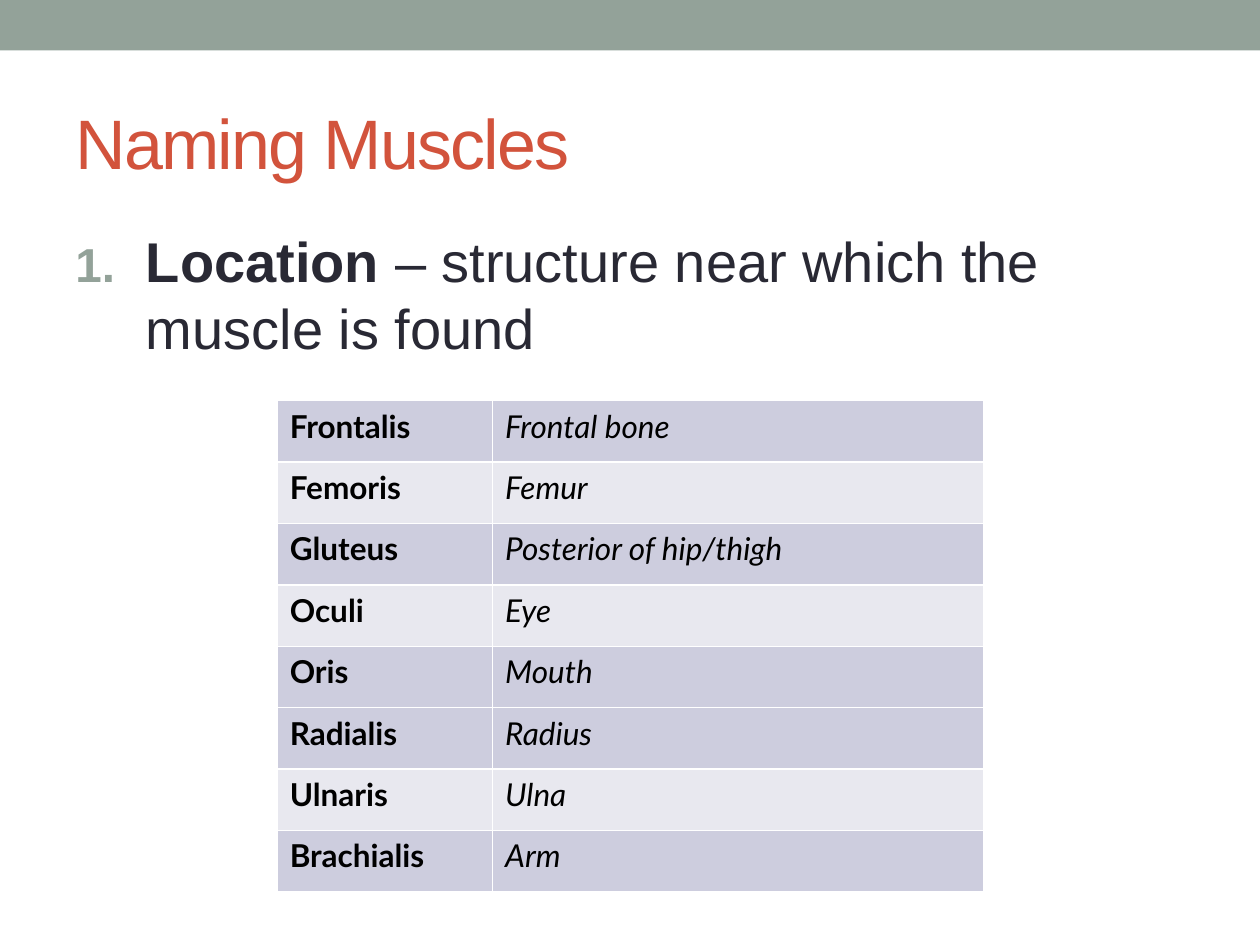
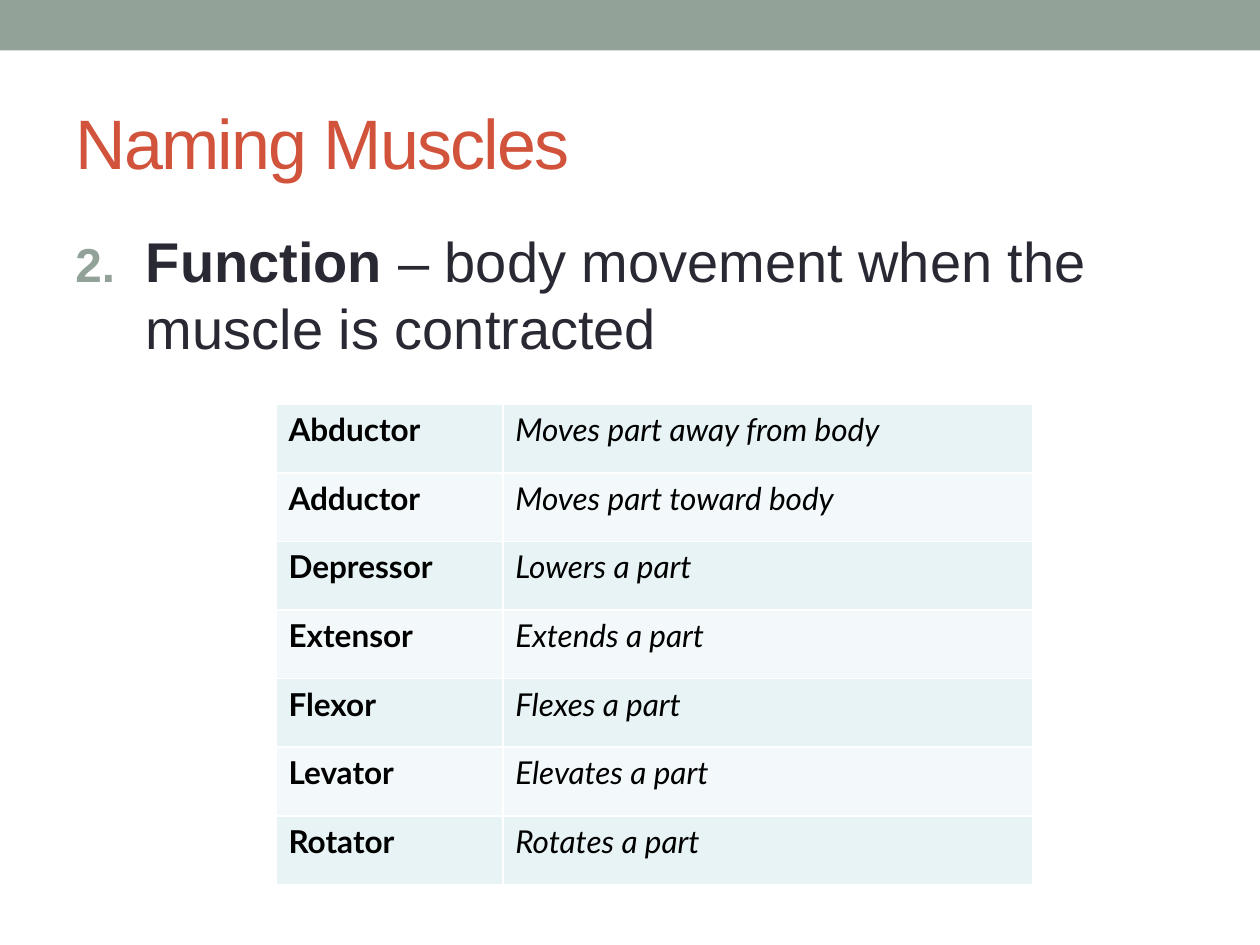
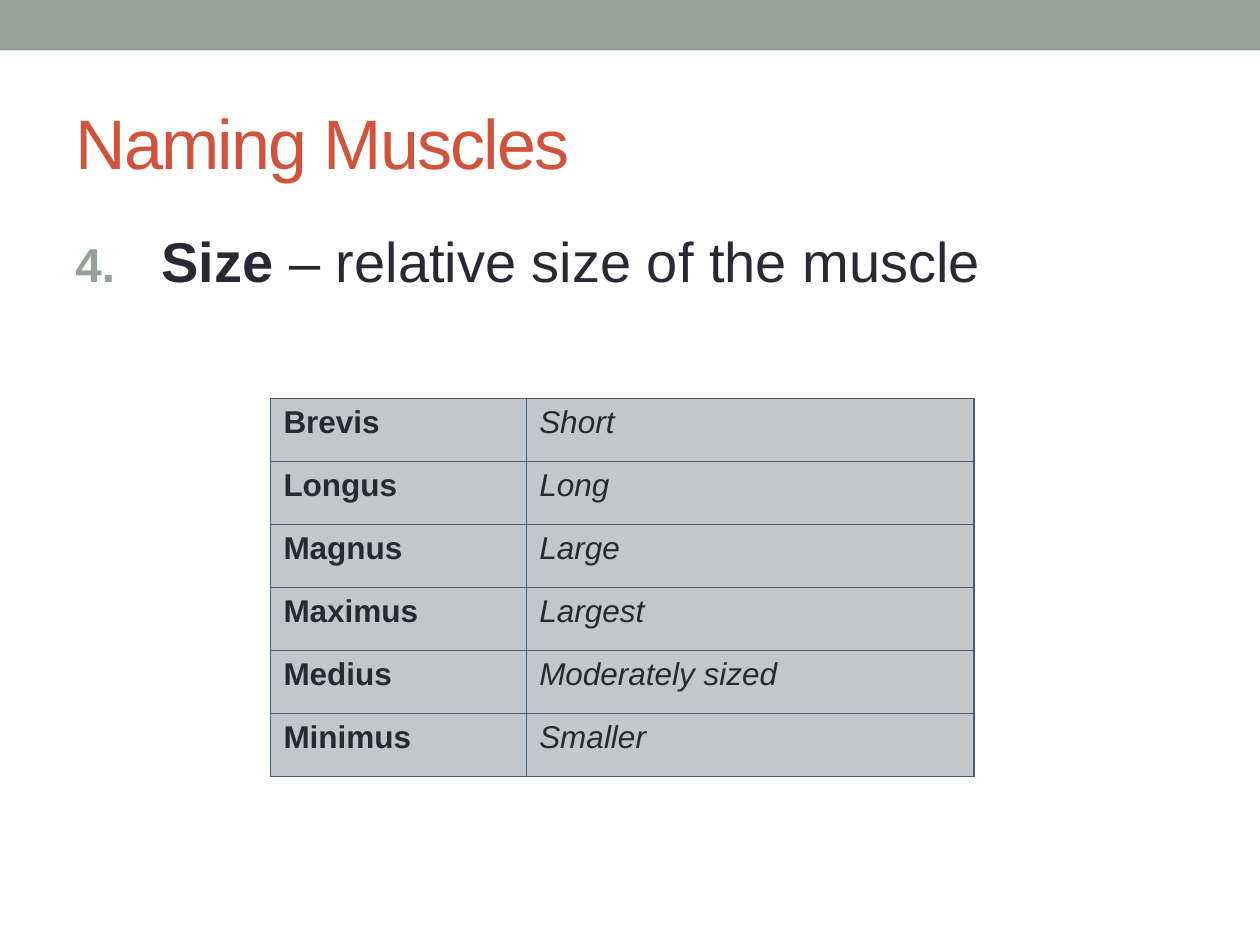
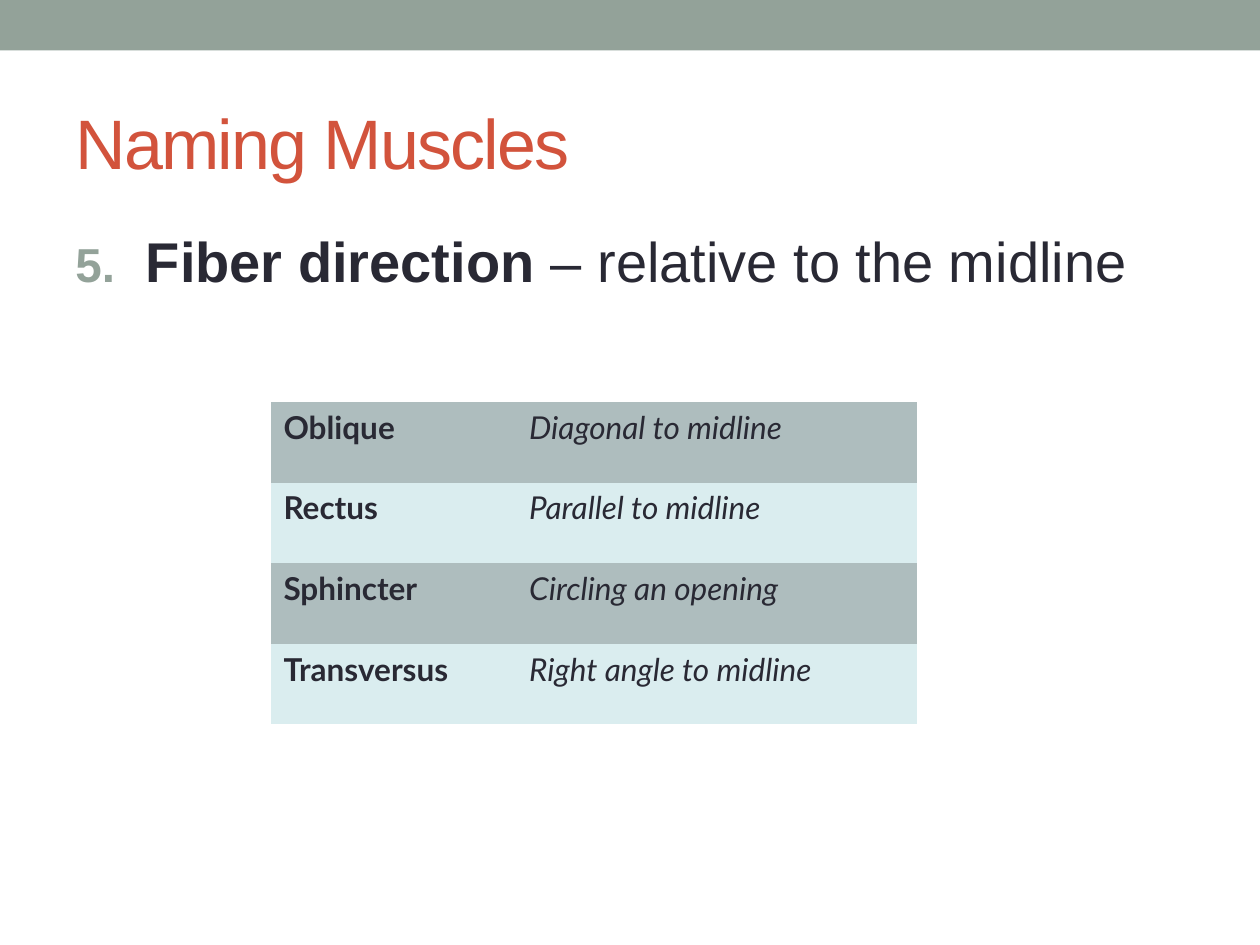
from dataclasses import dataclass

from lxml import etree
from pptx import Presentation
from pptx.dml.color import RGBColor
from pptx.enum.shapes import MSO_SHAPE
from pptx.enum.text import MSO_ANCHOR
from pptx.oxml import parse_xml
from pptx.oxml.ns import nsdecls, qn
from pptx.util import Inches, Pt

RECTANGLE = MSO_SHAPE.RECTANGLE
MIDDLE = MSO_ANCHOR.MIDDLE

COLORS = {
    "band": "93A299",
    "title": "D2533C",
    "text": "292934",
    "black": "000000",
    "white": "FFFFFF",
    "lilac": "CDCDDE",
    "pale lilac": "E8E8EF",
    "mint": "E7F3F4",
    "pale mint": "F3F9FA",
    "gray": "C3C6CB",
    "slate": "4C5A6A",
    "sage": "AEBDBE",
    "aqua": "DAEDEF",
}
TITLE = "Naming Muscles"
HEADING_FONT = "Arial"
BAND_BOX = (0, 0, 10, 0.4)
TITLE_BOX = (0.5, 0.58, 9, 1.08)
RULE_BOX = (0.5, 1.75, 9, 5.33)
NUMBER_INDENT = Inches(0.56)
PLAIN_TABLE_STYLE = "{2D5ABB26-0587-4C30-8999-92F81FD0307C}"
BORDER_SIDES = ("lnL", "lnR", "lnT", "lnB")


@dataclass
class TableStyle:
    """Look of a table of muscle names."""

    fills: tuple
    font: str = "Lato"
    text: str = "text"
    border: str = ""
    border_width: float = 1


@dataclass
class NamingRule:
    """One numbered rule with its table of names and meanings."""

    number: int
    term: str
    explanation: str
    box: tuple
    first_column: float
    style: TableStyle
    rows: list


RULES = [
    NamingRule(
        1, "Location", " – structure near which the muscle is found",
        (2.2, 3.18, 5.61, 3.9), 1.71,
        TableStyle(("lilac", "pale lilac", "lilac", "pale lilac", "lilac"),
                   text="black", border="white"),
        [("Frontalis", "Frontal bone"), ("Femoris", "Femur"),
         ("Gluteus", "Posterior of hip/thigh"), ("Oculi", "Eye"),
         ("Oris", "Mouth"), ("Radialis", "Radius"),
         ("Ulnaris", "Ulna"), ("Brachialis", "Arm")],
    ),
    NamingRule(
        2, "Function", " – body movement when the muscle is contracted",
        (2.19, 3.21, 6.01, 3.81), 1.8,
        TableStyle(("mint", "pale mint"), text="black", border="white"),
        [("Abductor", "Moves part away from body"),
         ("Adductor", "Moves part toward body"),
         ("Depressor", "Lowers a part"), ("Extensor", "Extends a part"),
         ("Flexor", "Flexes a part"), ("Levator", "Elevates a part"),
         ("Rotator", "Rotates a part")],
    ),
    NamingRule(
        4, " Size ", "– relative size of the muscle",
        (2.15, 3.16, 5.58, 3), 2.03,
        TableStyle(("gray",), font="Arial", border="slate", border_width=0.75),
        [("Brevis", "Short"), ("Longus", "Long"), ("Magnus", "Large"),
         ("Maximus", "Largest"), ("Medius", "Moderately sized"),
         ("Minimus", "Smaller")],
    ),
    NamingRule(
        5, "Fiber direction ", "– relative to the midline",
        (2.15, 3.19, 5.13, 2.56), 1.95,
        TableStyle(("sage", "aqua")),
        [("Oblique", "Diagonal to midline"), ("Rectus", "Parallel to midline"),
         ("Sphincter", "Circling an opening"),
         ("Transversus", "Right angle to midline")],
    ),
]


def color(name):
    """Return the named colour."""
    return RGBColor.from_string(COLORS[name])


def inches(box):
    """Turn a box of numbers into lengths."""
    return [Inches(length) for length in box]


def set_font(font, name, size, color_name):
    """Set typeface, size and colour of a font."""
    font.name = name
    font.size = Pt(size)
    font.color.rgb = color(color_name)


def add_band(slide, box):
    """Draw the band along the top edge."""
    band = slide.shapes.add_shape(RECTANGLE, *inches(box))
    band.shadow.inherit = False
    band.fill.solid()
    band.fill.fore_color.rgb = color("band")
    band.line.fill.background()


def add_title(slide, box):
    """Write the slide title."""
    frame = slide.shapes.add_textbox(*inches(box)).text_frame
    frame.word_wrap = True
    frame.vertical_anchor = MIDDLE
    paragraph = frame.paragraphs[0]
    run = paragraph.add_run()
    run.text = TITLE
    set_font(paragraph.font, HEADING_FONT, 40, "title")
    run.font._element.set("spc", "-100")


def number_paragraph(paragraph, number):
    """Give a paragraph a coloured number and a hanging indent."""
    properties = paragraph._p.get_or_add_pPr()
    properties.set("marL", str(NUMBER_INDENT))
    properties.set("indent", str(-NUMBER_INDENT))
    settings = parse_xml(
        f'<a:pPr {nsdecls("a")}>'
        '<a:spcBef><a:spcPct val="20000"/></a:spcBef>'
        f'<a:buClr><a:srgbClr val="{COLORS["band"]}"/></a:buClr>'
        '<a:buSzPct val="85000"/><a:buFont typeface="+mj-lt"/>'
        f'<a:buAutoNum type="arabicPeriod" startAt="{number}"/></a:pPr>'
    )
    for position, setting in enumerate(list(settings)):
        properties.insert(position, setting)


def add_rule_text(slide, box, rule):
    """Write the numbered rule with its term in bold."""
    frame = slide.shapes.add_textbox(*inches(box)).text_frame
    frame.word_wrap = True
    paragraph = frame.paragraphs[0]
    for text, bold in ((rule.term, True), (rule.explanation, False)):
        run = paragraph.add_run()
        run.text = text
        run.font.bold = bold
        set_font(run.font, HEADING_FONT, 32, "text")
    number_paragraph(paragraph, rule.number)


def add_borders(cell, style):
    """Draw the four borders of a cell."""
    properties = cell._tc.get_or_add_tcPr()
    for position, side in enumerate(BORDER_SIDES):
        line = etree.Element(qn(f"a:{side}"), w=str(Pt(style.border_width)))
        fill = etree.SubElement(line, qn("a:solidFill"))
        etree.SubElement(fill, qn("a:srgbClr"), val=COLORS[style.border])
        properties.insert(position, line)


def fill_cell(cell, text, is_name, fill, style):
    """Write one table cell, bold for names and italic for meanings."""
    cell.text = text
    cell.fill.solid()
    cell.fill.fore_color.rgb = color(fill)
    font = cell.text_frame.paragraphs[0].font
    set_font(font, style.font, 18, style.text)
    font.bold = is_name
    font.italic = not is_name
    if style.border:
        add_borders(cell, style)


def add_names_table(slide, box, rule):
    """Place the table of muscle names and their meanings."""
    table = slide.shapes.add_table(len(rule.rows), 2, *inches(box)).table
    table.first_row = False
    table.horz_banding = False
    table._tbl.tblPr.find(qn("a:tableStyleId")).text = PLAIN_TABLE_STYLE
    table.columns[0].width = Inches(rule.first_column)
    table.columns[1].width = Inches(box[2] - rule.first_column)
    fills = rule.style.fills
    for row_index, texts in enumerate(rule.rows):
        table.rows[row_index].height = Inches(box[3] / len(rule.rows))
        fill = fills[row_index % len(fills)]
        for column_index, text in enumerate(texts):
            cell = table.cell(row_index, column_index)
            fill_cell(cell, text, column_index == 0, fill, rule.style)


def add_rule_slide(presentation, rule):
    """Build the slide of one naming rule."""
    slide = presentation.slides.add_slide(presentation.slide_layouts[6])
    add_band(slide, BAND_BOX)
    add_title(slide, TITLE_BOX)
    add_rule_text(slide, RULE_BOX, rule)
    add_names_table(slide, rule.box, rule)


def main():
    """Build and save the presentation."""
    presentation = Presentation()
    presentation.slide_width = Inches(10)
    presentation.slide_height = Inches(7.5)
    for rule in RULES:
        add_rule_slide(presentation, rule)
    presentation.save("out.pptx")


if __name__ == "__main__":
    main()
